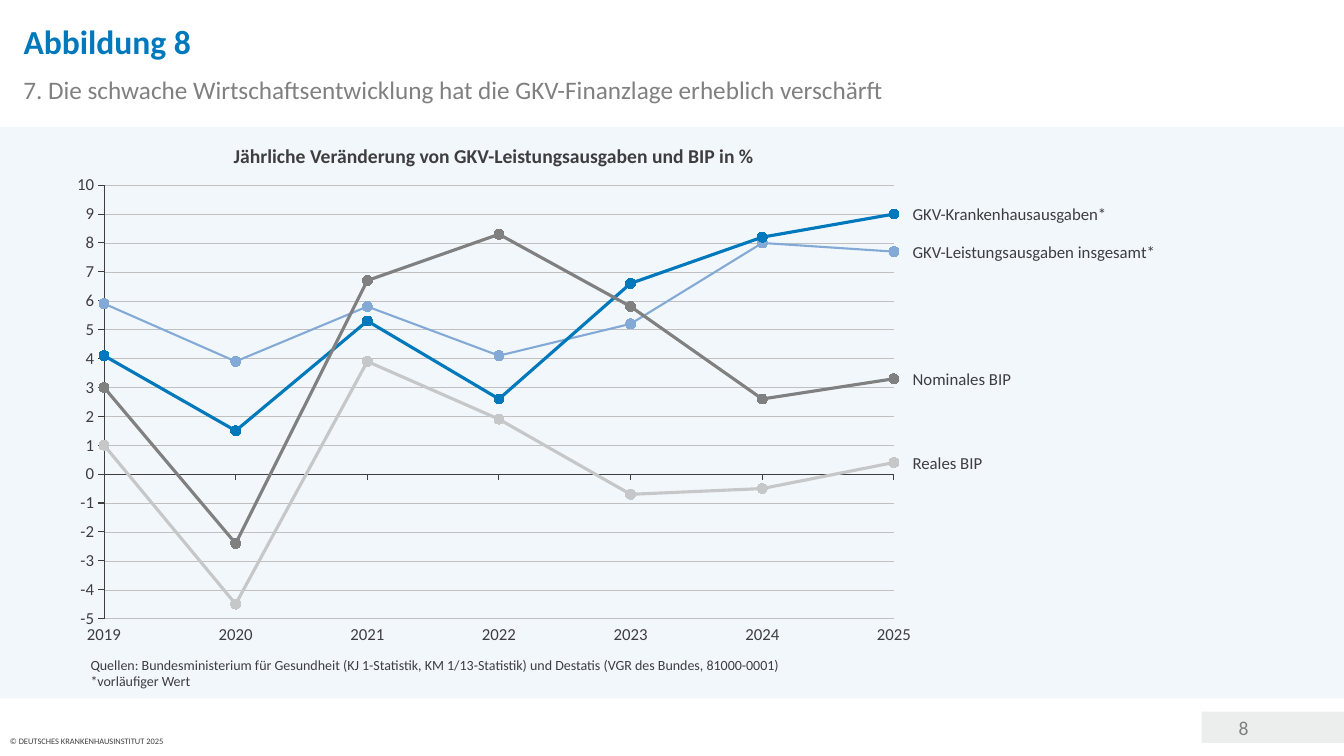
from lxml import etree
from pptx import Presentation
from pptx import util as u
from pptx.chart.data import XyChartData
from pptx.dml.color import RGBColor
from pptx.enum import chart as ch, shapes, text
from pptx.oxml.ns import qn

BLUE = RGBColor(0x00, 0x79, 0xBC)
LIGHT_BLUE = RGBColor(0x83, 0xAA, 0xD6)
BAND = RGBColor(0x4B, 0x8F, 0xC8)
GREY = RGBColor(0x80, 0x80, 0x80)
LIGHT_GREY = RGBColor(0xC6, 0xC7, 0xC8)
GRID = RGBColor(0xC0, 0xC0, 0xC0)
PALE = RGBColor(0xEC, 0xED, 0xED)
DARK = RGBColor(0x3E, 0x3D, 0x40)

YEARS = list(range(2019, 2026))
LOW, HIGH = -5, 10
# Name, values, colour, line width, label width in percent
SERIES = [
    ("Nominales BIP", (3, -2.4, 6.7, 8.3, 5.8, 2.6, 3.3), GREY, 2.25, 7.35),
    ("Reales BIP", (1, -4.5, 3.9, 1.9, -0.7, -0.5, 0.4), LIGHT_GREY, 2.25, 5.25),
    ("GKV-Krankenhausausgaben*", (4.1, 1.5, 5.3, 2.6, 6.6, 8.2, 9), BLUE, 2.25, 14.55),
    ("GKV-Leistungsausgaben insgesamt*", (5.9, 3.9, 5.8, 4.1, 5.2, 8, 7.7),
     LIGHT_BLUE, 1.5, 18.15),
]

# Chart frame in percent of the slide, plot area as shares of the frame
FRAME = (4.28, 21.87, 62.93, 62.67)
PLOT = {"x": 0.055, "y": 0.042, "w": 0.934, "h": 0.915}
PLOT_LEFT = FRAME[0] + PLOT["x"] * FRAME[2]
PLOT_TOP = FRAME[1] + PLOT["y"] * FRAME[3]
PLOT_WIDTH = PLOT["w"] * FRAME[2]
PLOT_HEIGHT = PLOT["h"] * FRAME[3]


class SlideBuilder:
    """Holds the style and the page; places are in percent of the slide."""

    font_name = "Calibri"

    def __init__(self, deck):
        self.deck = deck
        self.page = deck.slides.add_slide(deck.slide_layouts[5])

    def place(self, left, top, width, height):
        across, down = self.deck.slide_width / 100, self.deck.slide_height / 100
        return (u.Emu(round(left * across)), u.Emu(round(top * down)),
                u.Emu(round(width * across)), u.Emu(round(height * down)))

    def style(self, font, size, color, bold=False):
        font.name, font.size, font.bold = self.font_name, u.Pt(size), bold
        font.color.rgb = color

    def fill_text(self, box, words, size, color, bold=False, inset=True, wrap=True,
                  align=text.PP_ALIGN.LEFT, anchor=text.MSO_ANCHOR.TOP, spacing=None):
        frame = box.text_frame
        frame.text = words
        frame.auto_size = text.MSO_AUTO_SIZE.NONE
        frame.word_wrap = wrap
        frame.vertical_anchor = anchor
        if not inset:
            frame.margin_left = frame.margin_right = 0
            frame.margin_top = frame.margin_bottom = 0
        para = frame.paragraphs[0]
        para.alignment = align
        para.space_before = u.Pt(0)
        if spacing:
            para.line_spacing = spacing
        for span in para.runs:
            self.style(span.font, size, color, bold)

    def title(self, place, words, size, color):
        box = self.page.shapes.title
        box.left, box.top, box.width, box.height = self.place(*place)
        self.fill_text(box, words, size, color, True, anchor=text.MSO_ANCHOR.MIDDLE)

    def label(self, place, words, size, color, **options):
        box = self.page.shapes.add_textbox(*self.place(*place))
        self.fill_text(box, words, size, color, **options)

    def panel(self, place, color, alpha=None):
        box = self.page.shapes.add_shape(shapes.MSO_SHAPE.RECTANGLE, *self.place(*place))
        box.shadow.inherit = False
        box.line.fill.background()
        box.fill.solid()
        box.fill.fore_color.rgb = color
        if alpha:
            tint = box._element.spPr.find(".//" + qn("a:srgbClr"))
            etree.SubElement(tint, qn("a:alpha")).set("val", str(alpha * 1000))

    def axis(self, axis, low, high):
        axis.minimum_scale, axis.maximum_scale, axis.major_unit = low, high, 1
        axis.major_tick_mark = ch.XL_TICK_MARK.OUTSIDE
        axis.minor_tick_mark = ch.XL_TICK_MARK.NONE
        axis.has_major_gridlines = False
        axis.format.line.color.rgb = DARK
        axis.format.line.width = u.Pt(0.75)
        self.style(axis.tick_labels.font, 12, DARK)

    def line_chart(self):
        data = XyChartData()
        for name, values, *_ in SERIES:
            series = data.add_series(name)
            for year, value in zip(YEARS, values):
                series.add_data_point(year, value)
        chart = self.page.shapes.add_chart(
            ch.XL_CHART_TYPE.XY_SCATTER_LINES, *self.place(*FRAME), data).chart
        chart.has_legend = chart.has_title = False
        self.style(chart.font, 10, DARK)

        # Axes
        years, percent = chart.category_axis, chart.value_axis
        self.axis(years, YEARS[0], YEARS[-1])
        years.tick_label_position = ch.XL_TICK_LABEL_POSITION.NONE
        years.crosses = ch.XL_AXIS_CROSSES.MINIMUM
        self.axis(percent, LOW, HIGH)
        percent.tick_labels.number_format = '#,##0;"-"#,##0'
        percent.tick_labels.number_format_is_linked = False
        percent.has_major_gridlines = True
        percent.major_gridlines.format.line.color.rgb = GRID
        percent.major_gridlines.format.line.width = u.Pt(0.25)

        # Series
        chart.plots[0].vary_by_categories = False
        for series, (_, _, color, width, _) in zip(chart.plots[0].series, SERIES):
            series.smooth = False
            series.format.line.color.rgb = color
            series.format.line.width = u.Pt(width)
            marker = series.marker
            marker.style, marker.size = ch.XL_MARKER_STYLE.CIRCLE, 7
            marker.format.fill.solid()
            marker.format.fill.fore_color.rgb = color
            marker.format.line.color.rgb = color

        # Fixed inner plot area
        area = chart._chartSpace.find(".//" + qn("c:plotArea"))
        for old in area.findall(qn("c:layout")):
            area.remove(old)
        layout = etree.Element(qn("c:layout"))
        area.insert(0, layout)
        manual = etree.SubElement(layout, qn("c:manualLayout"))
        settings = {"layoutTarget": "inner", "xMode": "edge", "yMode": "edge", **PLOT}
        for name, value in settings.items():
            etree.SubElement(manual, qn("c:" + name)).set("val", str(value))


def main():
    deck = Presentation()
    deck.slide_width, deck.slide_height = u.Inches(13.33), u.Inches(7.5)
    slide = SlideBuilder(deck)

    # Footer and background band
    slide.panel((89.4, 94.13, 10.6, 4.13), PALE)
    slide.label((91.43, 94, 4.2, 4.53), "8", 14, GREY)
    slide.label((0, 96.67, 23.63, 3.2), "© DEUTSCHES KRANKENHAUSINSTITUT 2025", 6, DARK)
    slide.panel((0, 16.8, 100, 75.6), BAND, alpha=7)

    # Headings and sources
    slide.title((1, 2, 86.25, 6.8), "Abbildung 8", 24, BLUE)
    slide.label((1, 9.2, 96.85, 6.27), "7. Die schwache Wirtschaftsentwicklung hat "
                "die GKV-Finanzlage erheblich verschärft", 18, GREY)
    slide.label((16.65, 18.4, 40.9, 2.67), "Jährliche Veränderung von "
                "GKV-Leistungsausgaben und BIP in %", 14, DARK, bold=True)
    slide.label((6, 86.13, 68.9, 3.07), "Quellen: Bundesministerium für Gesundheit "
                "(KJ 1-Statistik, KM 1/13-Statistik) und Destatis "
                "(VGR des Bundes, 81000-0001)\v*vorläufiger Wert", 10, DARK)

    # Chart with year labels below and series labels beside the last points
    slide.line_chart()
    for index, year in enumerate(YEARS):
        center = PLOT_LEFT + PLOT_WIDTH * index / (len(YEARS) - 1)
        slide.label((center - 1.28, 82.8, 2.55, 2.4), str(year), 12, DARK, inset=False,
                    wrap=False, align=text.PP_ALIGN.CENTER, spacing=0.9)
    for name, values, _, _, width in SERIES:
        middle = PLOT_TOP + PLOT_HEIGHT * (HIGH - values[-1]) / (HIGH - LOW)
        slide.label((67.9, middle - 1.33, width, 2.67), name, 12, DARK, inset=False,
                    wrap=False, anchor=text.MSO_ANCHOR.MIDDLE)

    deck.save("out.pptx")


if __name__ == "__main__":
    main()
